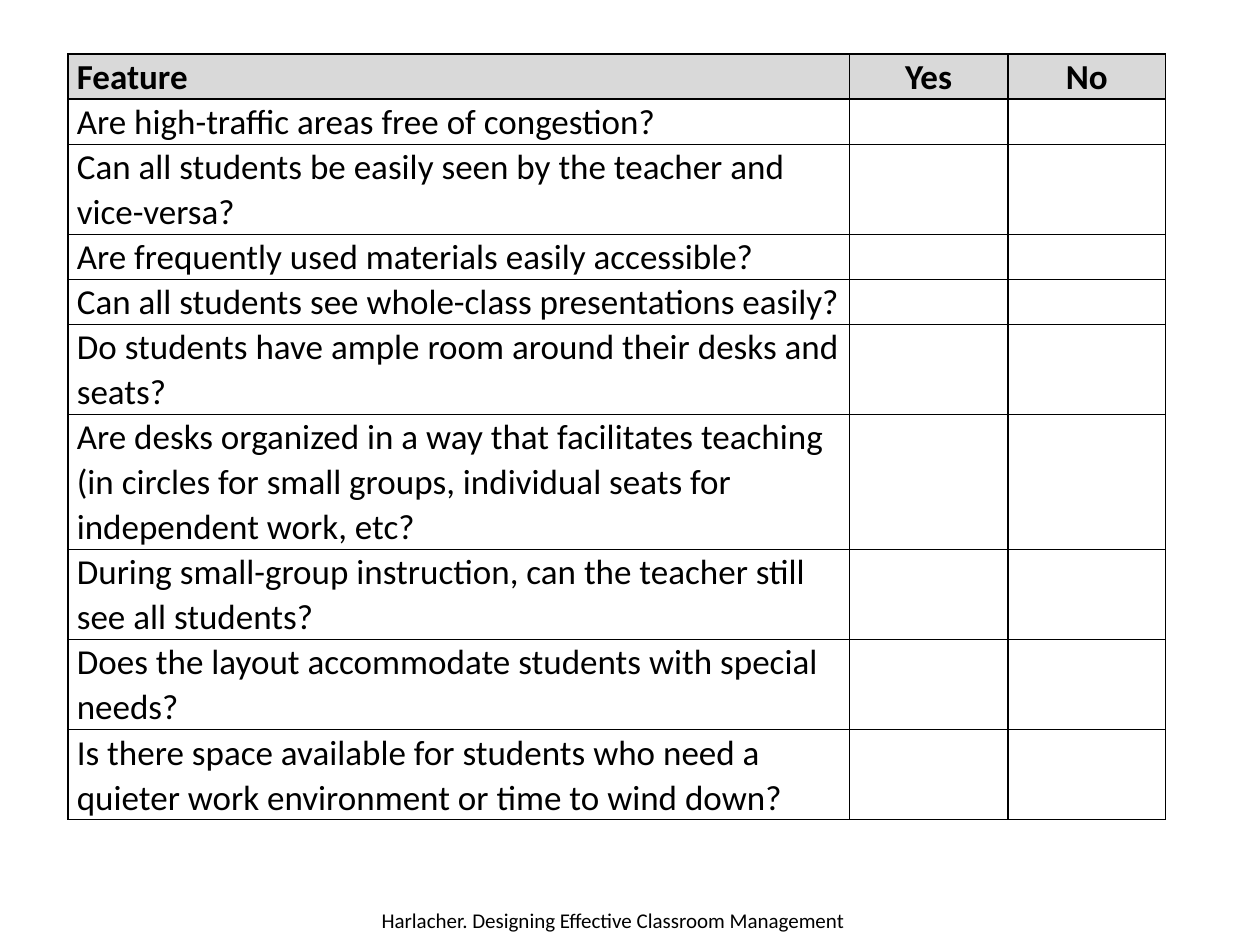
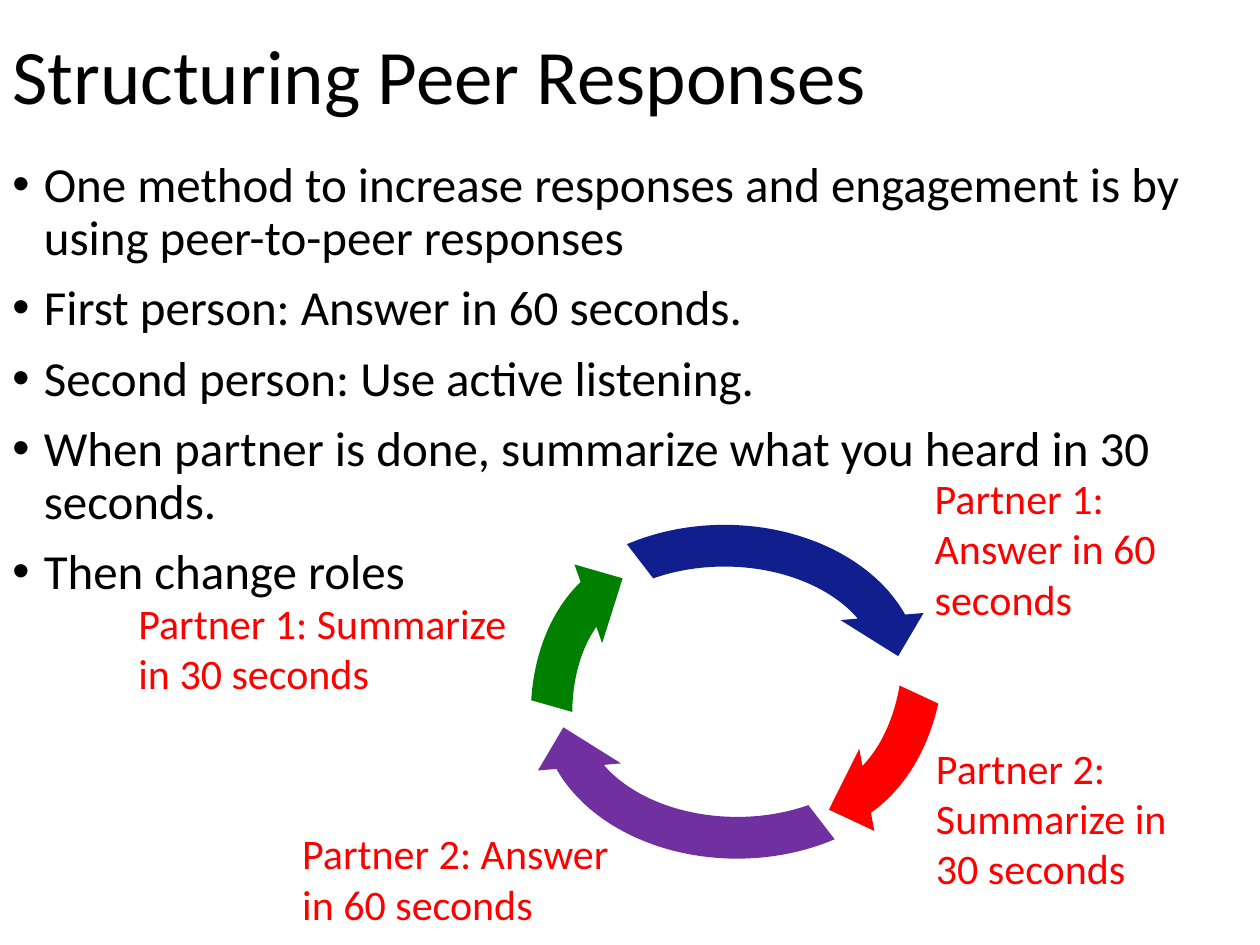
from lxml import etree
from pptx import Presentation
from pptx.dml.color import RGBColor
from pptx.enum.shapes import MSO_SHAPE
from pptx.enum.text import MSO_ANCHOR, PP_ALIGN
from pptx.oxml.ns import qn
from pptx.util import Inches, Pt

CURVED_ARROW = MSO_SHAPE.CIRCULAR_ARROW
MIDDLE, TOP = MSO_ANCHOR.MIDDLE, MSO_ANCHOR.TOP
LEFT, CENTER = PP_ALIGN.LEFT, PP_ALIGN.CENTER
BLACK, RED, GRAY = "000000", "FF0000", "D9D9D9"
FONT = "Calibri"


def color(value):
    return RGBColor.from_string(value)


def write(frame, lines, size, ink=BLACK, bold=False, bullet=False, **paragraph_format):
    frame.word_wrap = True
    for index, line in enumerate(lines):
        paragraph = frame.paragraphs[0] if index == 0 else frame.add_paragraph()
        paragraph.text = line
        for name, value in paragraph_format.items():
            setattr(paragraph, name, value)
        if bullet:
            properties = paragraph._p.get_or_add_pPr()
            properties.set("marL", str(Inches(0.25)))
            properties.set("indent", str(Inches(-0.25)))
            etree.SubElement(properties, qn("a:buFont")).set("typeface", "Arial")
            etree.SubElement(properties, qn("a:buChar")).set("char", "•")
            if index:
                paragraph.space_before = Pt(10)
        for run in paragraph.runs:
            for name, value in {"name": FONT, "size": Pt(size), "bold": bold}.items():
                setattr(run.font, name, value)
            run.font.color.rgb = color(ink)


prs = Presentation()
prs.slide_width, prs.slide_height = Inches(10), Inches(7.5)
blank = prs.slide_layouts[6]

checklist_slide = prs.slides.add_slide(blank)
features = [
    ("Feature", 0.32),
    ("Are high-traffic areas free of congestion?", 0.32),
    ("Can all students be easily seen by the teacher and vice-versa?", 0.66),
    ("Are frequently used materials easily accessible?", 0.32),
    ("Can all students see whole-class presentations easily?", 0.32),
    ("Do students have ample room around their desks and seats?", 0.66),
    ("Are desks organized in a way that facilitates teaching (in circles for small groups, "
     "individual seats for independent work, etc?", 1.0),
    ("During small-group instruction, can the teacher still see all students?", 0.66),
    ("Does the layout accommodate students with special needs?", 0.66),
    ("Is there space available for students who need a quieter work environment "
     "or time to wind down?", 0.66),
]
checklist = checklist_slide.shapes.add_table(
    len(features), 3, Inches(0.54), Inches(0.43), Inches(8.71), Inches(5.58)).table
checklist.first_row = checklist.horz_banding = False
for column, width in zip(checklist.columns, (6.2, 1.26, 1.25)):
    column.width = Inches(width)
cell_margins = {"margin_left": 0.07, "margin_right": 0.07, "margin_top": 0, "margin_bottom": 0}

for row, (feature, height) in enumerate(features):
    checklist.rows[row].height = Inches(height)
    answers = ("Yes", "No") if row == 0 else ("", "")
    for column, words in enumerate((feature, *answers)):
        cell = checklist.cell(row, column)
        for name, value in cell_margins.items():
            setattr(cell, name, Inches(value))
        for side in ("a:lnL", "a:lnR", "a:lnT", "a:lnB"):
            border = etree.SubElement(cell._tc.get_or_add_tcPr(), qn(side), w=str(Pt(1)))
            ink = etree.SubElement(border, qn("a:solidFill"))
            etree.SubElement(ink, qn("a:srgbClr"), val=BLACK)
        if row == 0:
            cell.fill.solid()
            cell.fill.fore_color.rgb = color(GRAY)
        else:
            cell.fill.background()
        if words:
            write(cell.text_frame, [words], 20, bold=row == 0, line_spacing=1.05,
                  space_after=Pt(4), alignment=CENTER if column else LEFT)

citation = checklist_slide.shapes.add_textbox(Inches(2.93), Inches(7.15), Inches(5), Inches(0.3))
write(citation.text_frame, ["Harlacher. Designing Effective Classroom Management"], 12)

peer_slide = prs.slides.add_slide(blank)
title = peer_slide.shapes.add_textbox(0, 0, Inches(8.62), Inches(1.26))
title.text_frame.vertical_anchor = MIDDLE
write(title.text_frame, ["Structuring Peer Responses"], 44, line_spacing=0.9)

steps = peer_slide.shapes.add_textbox(0, Inches(1.22), Inches(10), Inches(4.76))
steps.text_frame.vertical_anchor = TOP
write(steps.text_frame, [
    "One method to increase responses and engagement is by using peer-to-peer responses",
    "First person: Answer in 60 seconds.",
    "Second person: Use active listening.",
    "When partner is done, summarize what you heard in 30 seconds.",
    "Then change roles",
], 28, bullet=True, line_spacing=0.9)

LONG_TURN, SHORT_TURN = 139.45, 180.26
turns = [
    (4.03, 4.0, 0, LONG_TURN, "101E8E"),
    (4.13, 4.33, 180, LONG_TURN, "7030A0"),
    (4.61, 3.74, 84.5, SHORT_TURN, RED),
    (3.68, 4.57, 255.5, SHORT_TURN, "008000"),
]
for left, top, rotation, start_angle, hue in turns:
    turn = peer_slide.shapes.add_shape(
        CURVED_ARROW, Inches(left), Inches(top), Inches(3.44), Inches(2.65))
    turn.rotation = rotation
    for index, value in enumerate((0.125, 8.5, 204.58, start_angle, 0.125)):
        turn.adjustments[index] = value
    turn.shadow.inherit = False
    turn.fill.solid()
    turn.fill.fore_color.rgb = color(hue)
    turn.line.fill.background()

roles = [
    (7.32, 3.7, 2.2, 1.31, "Partner 1: Answer in 60 seconds"),
    (7.33, 5.84, 2.19, 1.31, "Partner 2: Summarize in\v30 seconds"),
    (2.3, 6.52, 2.73, 0.91, "Partner 2: Answer in 60 seconds"),
    (1, 4.69, 3.14, 0.91, "Partner 1: Summarize in 30 seconds"),
]
for *place, words in roles:
    role = peer_slide.shapes.add_textbox(*map(Inches, place))
    write(role.text_frame, [words], 24, RED)

prs.save("out.pptx")
